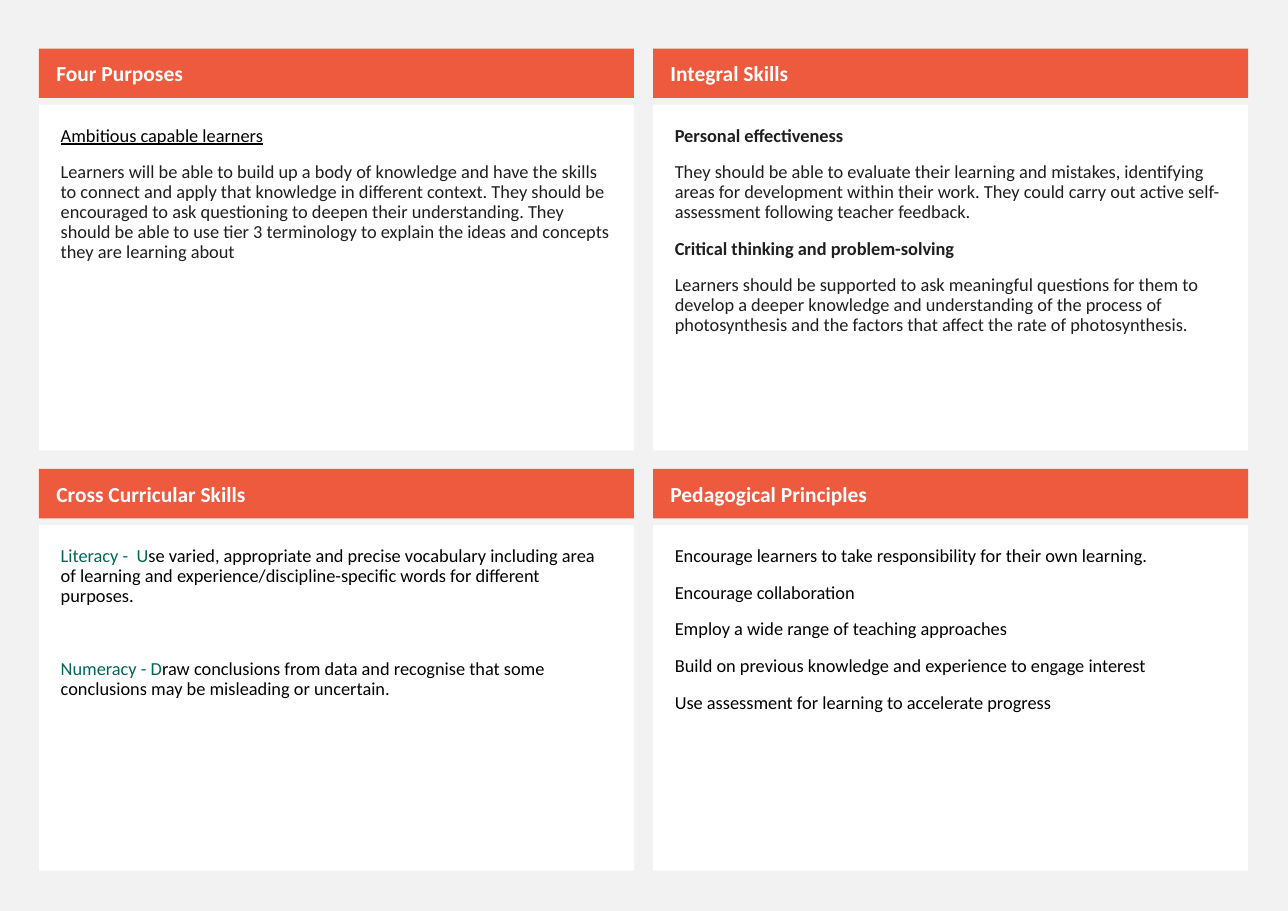
from lxml import etree
from pptx import Presentation
from pptx.dml.color import RGBColor
from pptx.enum.shapes import MSO_SHAPE as Shape
from pptx.enum.text import MSO_ANCHOR as Anchor, MSO_AUTO_SIZE as AutoSize, PP_ALIGN as Align
from pptx.oxml.ns import qn
from pptx.util import Cm, Pt

ORANGE, WHITE, GREY = "ED5A3E", "FFFFFF", "F2F2F2"
BLACK, CHARCOAL, GREEN = "000000", "1F1F1F", "006758"

# Each card: heading, then paragraphs of runs (text, colour, style)
CARDS = [
    ("Four Purposes", [
        [("Ambitious capable learners", BLACK, "underline")],
        [("Learners will be able to build up a body of knowledge and have the skills to connect "
          "and apply that knowledge in different context. They should be encouraged to ask "
          "questioning to deepen their understanding. They should be able to use tier 3 "
          "terminology to explain the ideas and concepts they are learning about", CHARCOAL, "")],
    ]),
    ("Integral Skills", [
        [("Personal effectiveness", CHARCOAL, "bold")],
        [("They should be able to evaluate their learning and mistakes, identifying areas for "
          "development within their work. They could carry out active self-assessment following "
          "teacher feedback.", CHARCOAL, "")],
        [("Critical thinking and problem-solving", CHARCOAL, "bold")],
        [("Learners should be supported to ask meaningful questions for them to develop a deeper "
          "knowledge and understanding of the process of photosynthesis and the factors that "
          "affect the rate of photosynthesis.", CHARCOAL, "")],
    ]),
    ("Cross Curricular Skills", [
        [("Literacy -  U", GREEN, ""),
         ("se varied, appropriate and precise vocabulary including area of learning and "
          "experience/discipline-specific words for different purposes.", BLACK, "")],
        [("Numeracy - D", GREEN, ""),
         ("raw conclusions from data and recognise that some conclusions may be misleading "
          "or uncertain.", BLACK, "")],
    ]),
    ("Pedagogical Principles", [
        [(principle, BLACK, "")] for principle in (
            "Encourage learners to take responsibility for their own learning.",
            "Encourage collaboration",
            "Employ a wide range of teaching approaches",
            "Build on previous knowledge and experience to engage interest",
            "Use assessment for learning to accelerate progress",
        )
    ]),
]
WIDE_GAP_CARD = "Cross Curricular Skills"

LEFT, TOP, WIDTH = 0.9, 1.12, 13.72
COLUMN_STEP, ROW_STEP = 14.16, 9.69
HEADING_HEIGHT, BODY_OFFSET, BODY_HEIGHT = 1.14, 1.29, 7.97


def paint(fill, colour):
    fill.solid()
    fill.fore_color.rgb = RGBColor.from_string(colour)


def add_run(paragraph, text, size, colour, style):
    run = paragraph.add_run()
    run.text = text
    run.font.name = "Calibri"
    run.font.size = Pt(size)
    run.font.bold = style == "bold"
    run.font.underline = style == "underline"
    paint(run.font.fill, colour)


deck = Presentation()
deck.slide_width, deck.slide_height = Cm(29.7), Cm(21)
slide = deck.slides.add_slide(deck.slide_layouts.get_by_name("Comparison"))
paint(slide.background.fill, GREY)

bodies = []
for placeholder in list(slide.placeholders):
    if placeholder.placeholder_format.idx in (1, 2, 3, 4):
        bodies.append(placeholder)
    else:
        placeholder.element.getparent().remove(placeholder.element)

for index, (body, (title, paragraphs)) in enumerate(zip(bodies, CARDS)):
    row, column = divmod(index, 2)
    left, top = LEFT + column * COLUMN_STEP, TOP + row * ROW_STEP

    heading = slide.shapes.add_shape(Shape.RECTANGLE, Cm(left), Cm(top),
                                     Cm(WIDTH), Cm(HEADING_HEIGHT))
    heading.shadow.inherit = False
    heading.line.fill.background()
    paint(heading.fill, ORANGE)
    label = heading.text_frame
    label.vertical_anchor = Anchor.MIDDLE
    label.margin_left = Cm(0.4)
    label.paragraphs[0].alignment = Align.LEFT
    add_run(label.paragraphs[0], title, 14, WHITE, "bold")

    body.left, body.top = Cm(left), Cm(top + BODY_OFFSET)
    body.width, body.height = Cm(WIDTH), Cm(BODY_HEIGHT)
    paint(body.fill, WHITE)
    frame = body.text_frame
    frame.word_wrap = True
    frame.auto_size = AutoSize.NONE
    frame.vertical_anchor = Anchor.TOP
    frame.margin_left = frame.margin_right = Cm(0.5)
    frame.margin_top = frame.margin_bottom = Cm(0.5)

    for number, runs in enumerate(paragraphs):
        paragraph = frame.add_paragraph() if number else frame.paragraphs[0]
        paragraph.alignment = Align.LEFT
        paragraph.line_spacing = 0.9
        paragraph.space_before = Pt(35 if number and title == WIDE_GAP_CARD else 11)
        properties = paragraph._p.get_or_add_pPr()
        properties.set("marL", "0")
        properties.set("indent", "0")
        etree.SubElement(properties, qn("a:buNone"))
        for text, colour, style in runs:
            add_run(paragraph, text, 12, colour, style)

deck.save("out.pptx")
